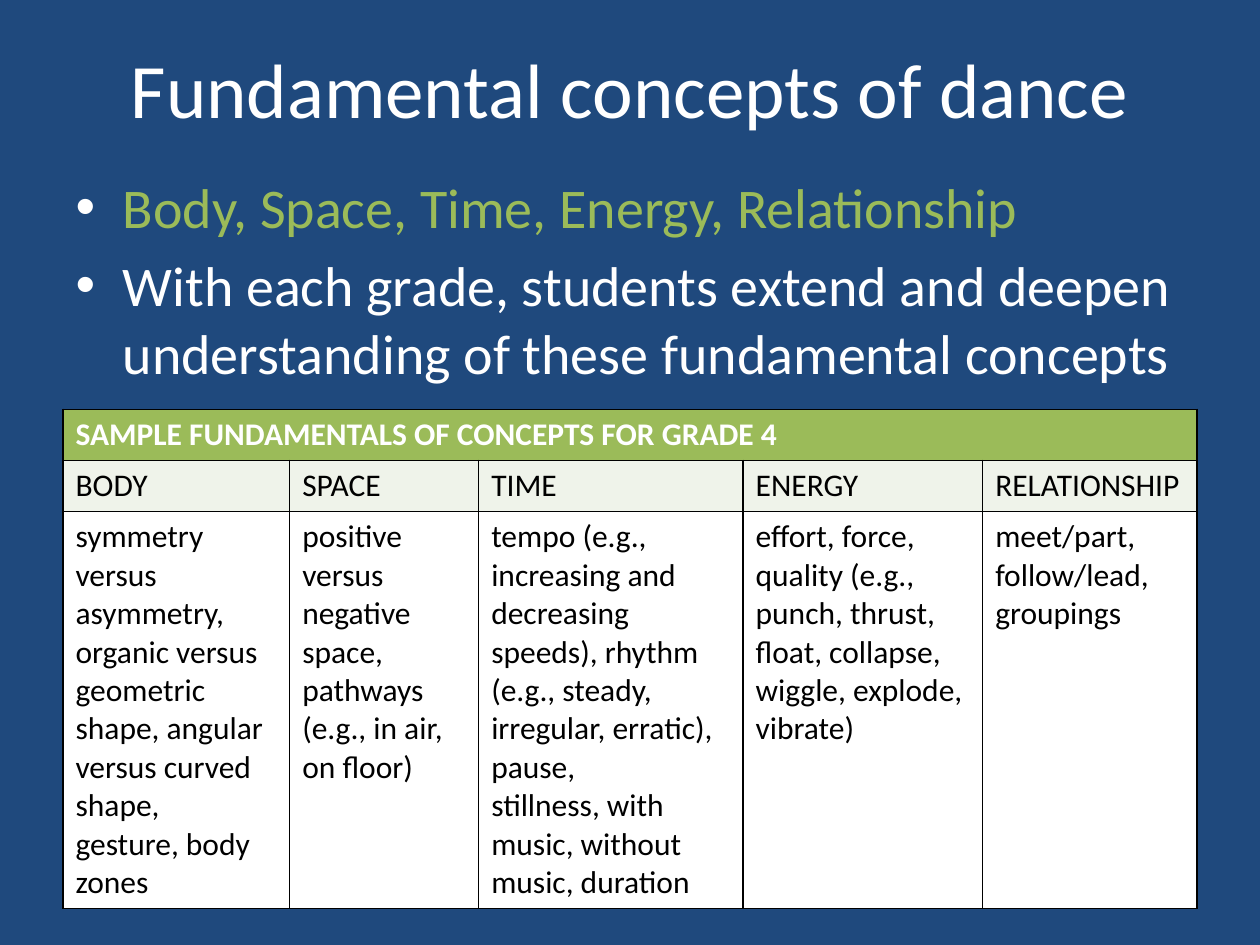
from dataclasses import dataclass

from lxml.etree import SubElement
from pptx import Presentation
from pptx.dml.color import RGBColor
from pptx.enum.text import MSO_ANCHOR, MSO_AUTO_SIZE, PP_ALIGN
from pptx.oxml import parse_xml
from pptx.oxml.ns import nsdecls, qn
from pptx.util import Cm, Pt

FONT = "Calibri"
COLORS = {
    "navy": "1F497D",
    "green": "9BBB59",
    "pale": "EFF3EA",
    "white": "FFFFFF",
    "black": "000000",
}
LEFT, WIDTH = Cm(1.27), Cm(22.86)
ROW_HEIGHTS = [Cm(1.03), Cm(1.03), Cm(7.87)]


@dataclass
class Concept:
    name: str
    examples: str
    width: Cm


@dataclass
class Bullet:
    text: str
    color: str


CONCEPTS = [
    Concept("BODY", "symmetry versus asymmetry, organic versus geometric shape, "
            "angular versus curved shape,\ngesture, body zones", Cm(4.57)),
    Concept("SPACE", "positive versus negative space, pathways (e.g., in air, on floor)",
            Cm(3.81)),
    Concept("TIME", "tempo (e.g., increasing and decreasing speeds), rhythm (e.g., steady, "
            "irregular, erratic), pause,\nstillness, with music, without music, duration",
            Cm(5.33)),
    Concept("ENERGY", "effort, force, quality (e.g., punch, thrust, float, collapse, "
            "wiggle, explode, vibrate)", Cm(4.83)),
    Concept("RELATIONSHIP", "meet/part, follow/lead, groupings", Cm(4.32)),
]
BULLETS = [
    Bullet("Body, Space, Time, Energy, Relationship", "green"),
    Bullet("With each grade, students extend and deepen understanding of these "
           "fundamental concepts", "white"),
]


def rgb(name: str) -> RGBColor:
    return RGBColor.from_string(COLORS[name])


def style(para, size: int, color: str, bold: bool = False) -> None:
    font = para.font
    font.name, font.size, font.bold = FONT, Pt(size), bold
    font.color.rgb = rgb(color)


def place(box, top: Cm, height: Cm) -> None:
    box.left, box.top, box.width, box.height = LEFT, top, WIDTH, height
    box.text_frame.auto_size = MSO_AUTO_SIZE.NONE


def add_bullet(para, bullet: Bullet) -> None:
    para.text = bullet.text
    style(para, 32, bullet.color)
    props = para._p.get_or_add_pPr()
    props.set("marL", str(Cm(0.95)))
    props.set("indent", str(-Cm(0.95)))
    spacing = SubElement(props, qn("a:spcBef"))
    SubElement(spacing, qn("a:spcPct"), val="20000")
    bullet_color = SubElement(props, qn("a:buClr"))
    SubElement(bullet_color, qn("a:srgbClr"), val=COLORS["white"])
    SubElement(props, qn("a:buFont"), typeface="Arial")
    SubElement(props, qn("a:buChar"), char="•")
    # Run defaults come last in the paragraph properties
    props.append(props.find(qn("a:defRPr")))


def format_cell(cell, text: str, fill: str, color: str, bold: bool) -> None:
    props = cell._tc.get_or_add_tcPr()
    for side in "LRTB":
        props.append(parse_xml(
            f'<a:ln{side} {nsdecls("a")} w="{Pt(1)}"><a:solidFill>'
            f'<a:srgbClr val="{COLORS["black"]}"/></a:solidFill></a:ln{side}>'))
    cell.fill.solid()
    cell.fill.fore_color.rgb = rgb(fill)
    cell.text = text
    for para in cell.text_frame.paragraphs:
        style(para, 18, color, bold)


def add_concept_table(page, heading: str) -> None:
    frame = page.shapes.add_table(len(ROW_HEIGHTS), len(CONCEPTS), LEFT, Cm(8.25),
                                  WIDTH, sum(ROW_HEIGHTS))
    table = frame.table
    for row, height in zip(table.rows, ROW_HEIGHTS):
        row.height = height
    for col, concept in enumerate(CONCEPTS):
        table.columns[col].width = concept.width
        format_cell(table.cell(0, col), "" if col else heading, "green", "white", True)
        format_cell(table.cell(1, col), concept.name, "pale", "black", False)
        format_cell(table.cell(2, col), concept.examples, "white", "black", False)
    table.cell(0, 0).merge(table.cell(0, len(CONCEPTS) - 1))


def main() -> None:
    deck = Presentation()
    deck.slide_width, deck.slide_height = Cm(25.4), Cm(19.05)
    page = deck.slides.add_slide(deck.slide_layouts[1])
    page.background.fill.solid()
    page.background.fill.fore_color.rgb = rgb("navy")

    # Title
    title = page.shapes.title
    place(title, Cm(0.18), Cm(3.18))
    title.text_frame.vertical_anchor = MSO_ANCHOR.MIDDLE
    title.text_frame.text = "Fundamental concepts of dance"
    para = title.text_frame.paragraphs[0]
    para.alignment = PP_ALIGN.CENTER
    style(para, 44, "white")

    # Bulleted list
    body = page.placeholders[1]
    place(body, Cm(3.35), Cm(12.57))
    frame = body.text_frame
    for index, bullet in enumerate(BULLETS):
        add_bullet(frame.add_paragraph() if index else frame.paragraphs[0], bullet)

    # Concepts by column
    add_concept_table(page, "SAMPLE FUNDAMENTALS OF CONCEPTS FOR GRADE 4")
    deck.save("out.pptx")


if __name__ == "__main__":
    main()
